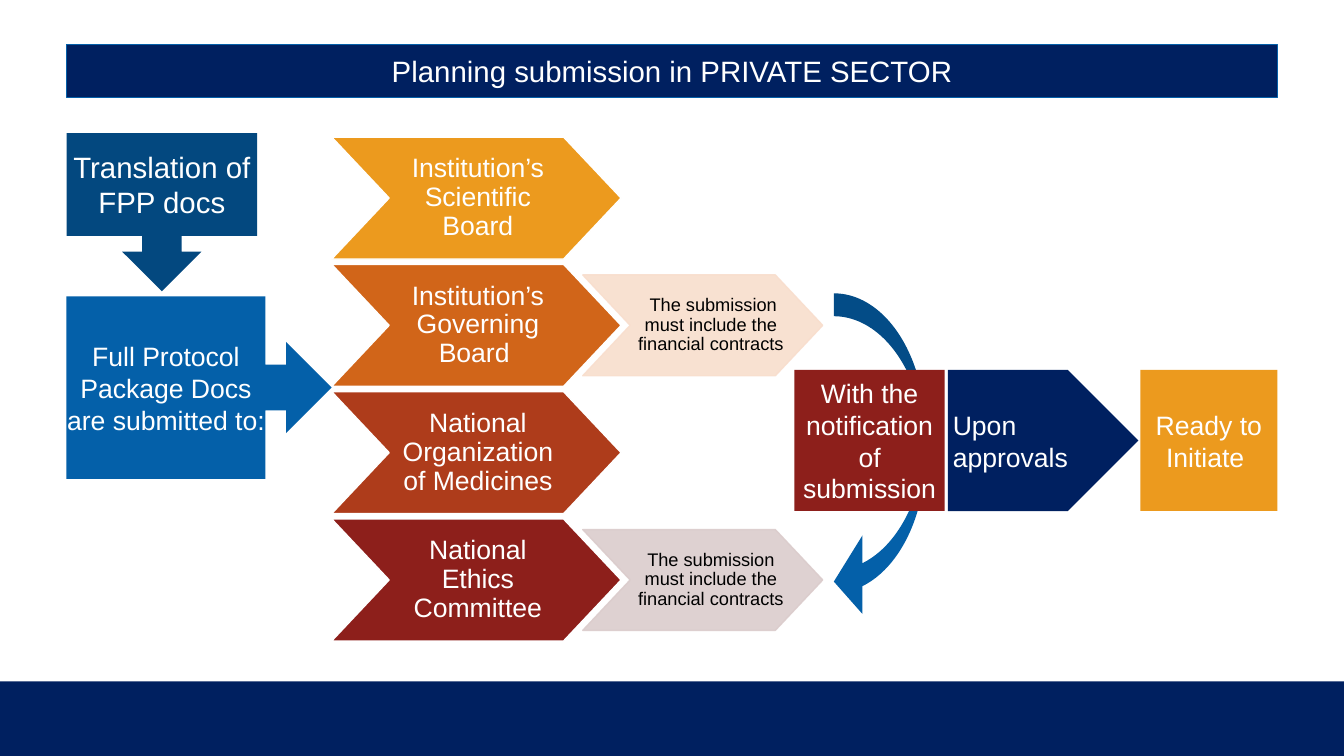
"""Build the slide on planning a submission in the private sector."""
import pptx
import pptx.dml.color
import pptx.enum.shapes
import pptx.enum.text
import pptx.oxml.ns
import pptx.util
from lxml import etree

Inches = pptx.util.Inches
RGBColor = pptx.dml.color.RGBColor
MSO_SHAPE = pptx.enum.shapes.MSO_SHAPE
PP_ALIGN = pptx.enum.text.PP_ALIGN

WHITE = RGBColor(0xFF, 0xFF, 0xFF)
BLACK = RGBColor(0x00, 0x00, 0x00)
NAVY = RGBColor(0x00, 0x20, 0x60)
BLUE = RGBColor(0x04, 0x60, 0xA9)
DEEP_BLUE = RGBColor(0x03, 0x48, 0x7F)
AMBER = RGBColor(0xEC, 0x9A, 0x1E)
ORANGE = RGBColor(0xD1, 0x65, 0x19)
RUST = RGBColor(0xAE, 0x3C, 0x1B)
DARK_RED = RGBColor(0x8D, 0x1F, 0x1B)
PEACH = RGBColor(0xF8, 0xDE, 0xCD)
MAUVE = RGBColor(0xDB, 0xCC, 0xCC)

deck = pptx.Presentation()
deck.slide_width, deck.slide_height = Inches(13.33), Inches(7.5)
slide = deck.slides.add_slide(deck.slide_layouts[6])


def write(shape, text, size, insets, color=WHITE, align=PP_ALIGN.CENTER, spacing=None):
    """Put text into a shape, breaking lines at each newline."""
    frame = shape.text_frame
    frame.word_wrap = True
    frame.vertical_anchor = pptx.enum.text.MSO_ANCHOR.MIDDLE
    frame.margin_left, frame.margin_top, frame.margin_right, frame.margin_bottom = map(Inches, insets)
    paragraph = frame.paragraphs[0]
    paragraph.alignment = align
    paragraph.line_spacing = spacing
    for index, line in enumerate(text.split("\n")):
        if index:
            paragraph.add_line_break()
        run = paragraph.add_run()
        run.text = line
        run.font.name = "Arial"
        run.font.size = pptx.util.Pt(size)
        run.font.color.rgb = color


def add_chevron(left, middle, width, height, notch, fill, line):
    """Draw a chevron centred on the height given by middle."""
    top, bottom, right = middle - height / 2, middle + height / 2, left + width
    corners = [(right - notch, top), (right, middle), (right - notch, bottom),
               (left, bottom), (left + notch, middle)]
    builder = slide.shapes.build_freeform(Inches(left), Inches(top))
    builder.add_line_segments([(Inches(x), Inches(y)) for x, y in corners], close=True)
    chevron = builder.convert_to_shape()
    chevron.shadow.inherit = False
    chevron.fill.solid()
    chevron.fill.fore_color.rgb = fill
    chevron.line.color.rgb = line
    chevron.line.width = pptx.util.Pt(1)
    return chevron


reviewers = [
    ("Institution’s Scientific Board", AMBER, None, None),
    ("Institution’s Governing Board ", ORANGE, PEACH,
     " The submission\nmust include the financial contracts"),
    ("National Organization of Medicines", RUST, None, None),
    ("National Ethics Committee", DARK_RED, MAUVE,
     "The submission\nmust include the financial contracts"),
]
for row, (reviewer, fill, tint, condition) in enumerate(reviewers):
    middle = 1.965 + 1.263 * row
    board = add_chevron(3.29, middle, 2.87, 1.21, 0.57, fill, WHITE)
    write(board, reviewer, 19, (0.63, 0.01, 0.6, 0.01), spacing=0.9)
    if condition:
        note = add_chevron(5.78, middle, 2.38, 1, 0.47, tint, tint)
        for color in note._element.spPr.iter(pptx.oxml.ns.qn("a:srgbClr")):
            etree.SubElement(color, pptx.oxml.ns.qn("a:alpha"), val="90000")
        write(note, condition, 13, (0.51, 0.01, 0.35, 0.01), BLACK, spacing=0.9)

BOX_INSETS = (0.05, 0.07, 0.05, 0.07)
NO_INSETS = (0, 0, 0, 0)
steps = [
    (MSO_SHAPE.CURVED_LEFT_ARROW, (8.27, 2.91, 0.91, 3.25), BLUE, (0.25, 0.857, 0.312),
     None, 0, None),
    (MSO_SHAPE.RECTANGLE, (7.88, 3.67, 1.49, 1.4), DARK_RED, (),
     "With the notification of submission", 19, BOX_INSETS),
    (MSO_SHAPE.RECTANGLE, (11.31, 3.67, 1.36, 1.4), AMBER, (),
     "Ready to Initiate ", 19, BOX_INSETS),
    (MSO_SHAPE.DOWN_ARROW_CALLOUT, (0.66, 1.32, 1.89, 1.57), DEEP_BLUE, (),
     "Translation of FPP docs", 21, NO_INSETS),
    (MSO_SHAPE.RIGHT_ARROW_CALLOUT, (0.66, 2.94, 2.63, 1.81), BLUE, (0.25, 0.25, 0.25, 0.75),
     "Full Protocol Package Docs are submitted to: ", 19, NO_INSETS),
    (MSO_SHAPE.RECTANGLE, (0, 6.76, 13.33, 0.74), NAVY, (), None, 0, None),
    (MSO_SHAPE.PENTAGON, (9.4, 3.67, 1.89, 1.4), NAVY, (),
     "Upon\napprovals", 19, (0.05, 0, 0.05, 0)),
    (MSO_SHAPE.RECTANGLE, (0.66, 0.44, 12.01, 0.53), NAVY, (),
     "Planning submission in PRIVATE SECTOR", 21, (0, 0.07, 0, 0.07)),
]
for kind, place, fill, adjustments, text, size, insets in steps:
    step = slide.shapes.add_shape(kind, *map(Inches, place))
    step.shadow.inherit = False
    step.fill.solid()
    step.fill.fore_color.rgb = fill
    step.line.fill.background()
    for index, value in enumerate(adjustments):
        step.adjustments[index] = value
    if text:
        align = PP_ALIGN.LEFT if kind == MSO_SHAPE.PENTAGON else PP_ALIGN.CENTER
        write(step, text, size, insets, align=align)
    if kind == MSO_SHAPE.PENTAGON:
        step.text_frame.word_wrap = False

title_bar = step
title_bar.line.color.rgb = BLUE
title_bar.line.width = pptx.util.Pt(0.75)

deck.save("out.pptx")
